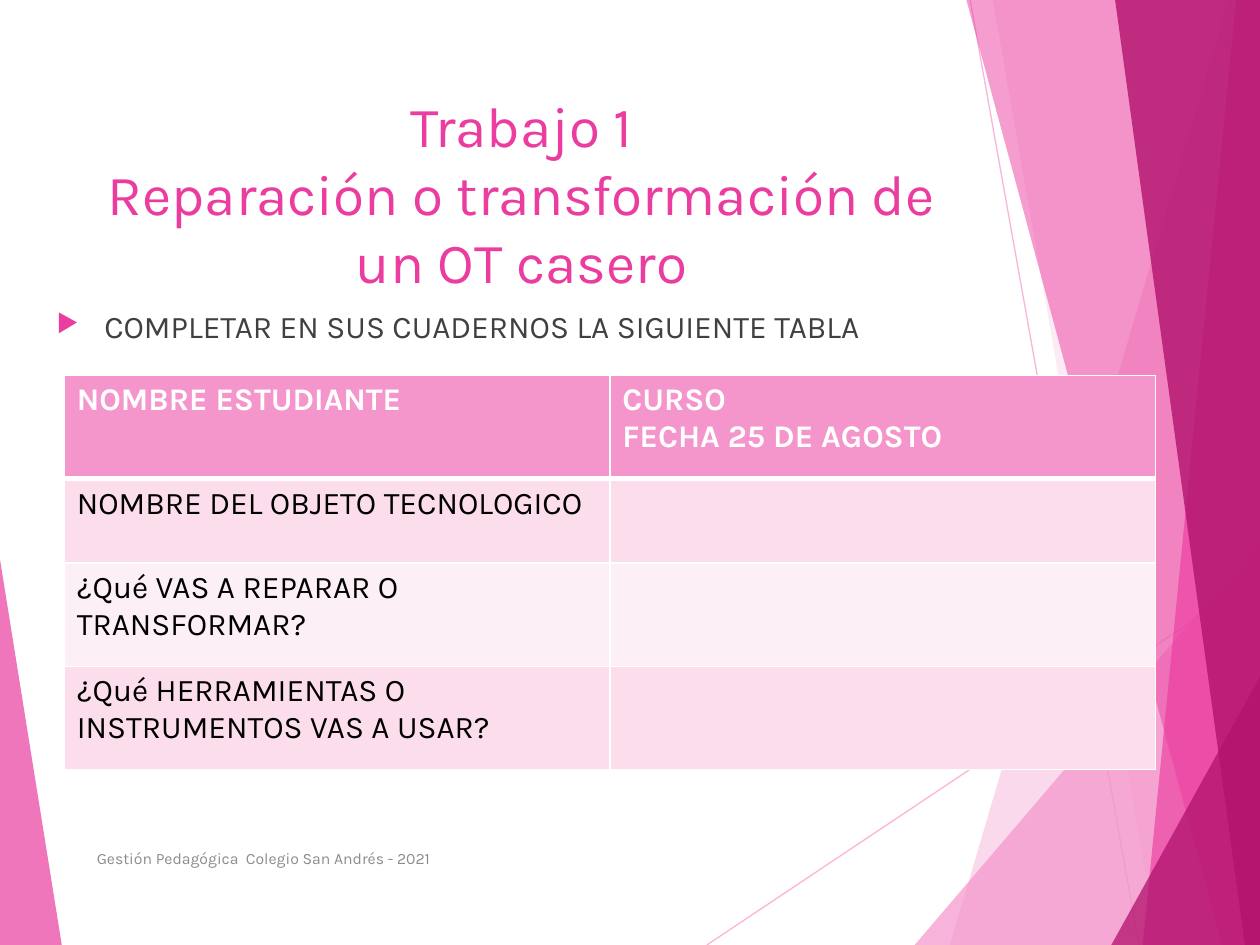
from lxml import etree
from pptx import Presentation
from pptx import util as u
from pptx.dml.color import RGBColor
from pptx.enum import shapes, text
from pptx.oxml.ns import qn

PINK, MAGENTA, PLUM, WHITE = "F496CB", "EB3D9F", "B2136D", "FFFFFF"


def paint(target, color, alpha=100):
    fill = getattr(target, "fill", target)
    fill.solid()
    fill.fore_color.rgb = RGBColor.from_string(color)
    if alpha < 100:
        clr = fill._xPr.find(".//" + qn("a:srgbClr"))
        etree.SubElement(clr, qn("a:alpha"), val=str(alpha * 1000))


def style(p, size, color, bold=False):
    p.font.name, p.font.size, p.font.bold = "Karla", u.Pt(size), bold
    paint(p.font, color)


prs = Presentation()
prs.slide_width, prs.slide_height = u.Inches(10), u.Inches(7.5)
W, H = 10, 7.5
s = prs.slides.add_slide(prs.slide_layouts[5])

for x1, y1, x2, y2 in [(5.61, H, W, 4.57), (7.7, 0, 9.04, H)]:
    line = s.shapes.add_connector(
        shapes.MSO_CONNECTOR.STRAIGHT, *[u.Inches(v) for v in (x1, y1, x2, y2)])
    paint(line.line, PINK, 70)
    line.line.width = u.Pt(0.75)
    etree.SubElement(line._element.spPr, qn("a:effectLst"))

facets = [
    (PINK, 36, [(9.75, 0), (7.54, H), (W, H), (W, 0)]),
    (PINK, 20, [(7.88, 0), (9.19, H), (W, H), (W, 0)]),
    (PINK, 72, [(7.26, H), (W, 4.29), (W, H)]),
    (MAGENTA, 50, [(7.67, 0), (9.7, H), (W, H), (W, 0)]),
    (MAGENTA, 66, [(9.81, 0), (9.07, H), (W, H), (W, 0)]),
    (PLUM, 80, [(8.85, 0), (9.88, H), (W, H), (W, 0)]),
    (PLUM, 76, [(8.82, H), (W, 5.37), (W, H)]),
    (MAGENTA, 70, [(0, 4.44), (0.49, H), (0, H)]),
]
for color, alpha, points in facets:
    corners = [(u.Inches(x), u.Inches(y)) for x, y in points]
    builder = s.shapes.build_freeform(*corners[0])
    builder.add_line_segments(corners[1:], close=True)
    sp = builder.convert_to_shape()
    paint(sp, color, alpha)
    sp.line.fill.background()
    sp.shadow.inherit = False

title = s.shapes.title
s.shapes._spTree.append(title._element)
body = s.shapes.add_textbox(0, 0, 0, 0)
footer = s.shapes.add_textbox(0, 0, 0, 0)
TOP, MIDDLE = text.MSO_ANCHOR.TOP, text.MSO_ANCHOR.MIDDLE
texts = [
    (title, (0.67, 0.67, 6.94, 1.7), 32.4, MAGENTA, TOP,
     "Trabajo 1\vReparación o transformación de un OT casero"),
    (body, (0.35, 2.39, 8.98, 4.21), 18, "404040", TOP,
     "COMPLETAR EN SUS CUADERNOS LA SIGUIENTE TABLA"),
    (footer, (0.67, 6.61, 5.06, 0.4), 9, "8C8C8C", MIDDLE,
     "Gestión Pedagógica  Colegio San Andrés - 2021"),
]
for sp, box, size, color, anchor, words in texts:
    sp.left, sp.top, sp.width, sp.height = [u.Inches(v) for v in box]
    tf = sp.text_frame
    tf.text = words
    tf.word_wrap, tf.auto_size = True, text.MSO_AUTO_SIZE.NONE
    tf.vertical_anchor = anchor
    style(tf.paragraphs[0], size, color)
title.text_frame.paragraphs[0].alignment = text.PP_ALIGN.CENTER

p = body.text_frame.paragraphs[0]
p.space_before = u.Pt(10)
pPr = p._p.get_or_add_pPr()
pPr.set("marL", str(u.Inches(0.38)))
pPr.set("indent", str(-u.Inches(0.38)))
bullet = etree.Element(qn("a:buClr"))
etree.SubElement(bullet, qn("a:srgbClr"), val=MAGENTA)
marks = [bullet, etree.Element(qn("a:buSzPct"), val="80000"),
         etree.Element(qn("a:buChar"), char="▶")]
for mark in marks:
    pPr.find(qn("a:defRPr")).addprevious(mark)

rows = [
    (0.82, PINK, ["NOMBRE ESTUDIANTE", "CURSO\nFECHA 25 DE AGOSTO"]),
    (0.67, "FBDDEC", ["NOMBRE DEL OBJETO TECNOLOGICO", ""]),
    (0.82, "FDEFF6", ["¿Qué VAS A REPARAR O TRANSFORMAR?", ""]),
    (0.82, "FBDDEC", ["¿Qué HERRAMIENTAS O INSTRUMENTOS VAS A USAR?", ""]),
]
table = s.shapes.add_table(len(rows), 2, u.Inches(0.51), u.Inches(2.98),
                           u.Inches(8.66), u.Inches(3.13)).table
for i, (height, color, words) in enumerate(rows):
    table.rows[i].height = u.Inches(height)
    for cell, label in zip(table.rows[i].cells, words):
        cell.text = label
        for p in cell.text_frame.paragraphs:
            style(p, 18, "000000" if i else WHITE, bold=i == 0)
        tcPr = cell._tc.get_or_add_tcPr()
        for side in "LRTB":
            thick = (i, side) in [(0, "B"), (1, "T")]
            ln = etree.SubElement(tcPr, qn("a:ln" + side), w=str(u.Pt(3 if thick else 1)))
            edge = etree.SubElement(ln, qn("a:solidFill"))
            etree.SubElement(edge, qn("a:srgbClr"), val=WHITE)
        paint(cell, color)

prs.save("out.pptx")
